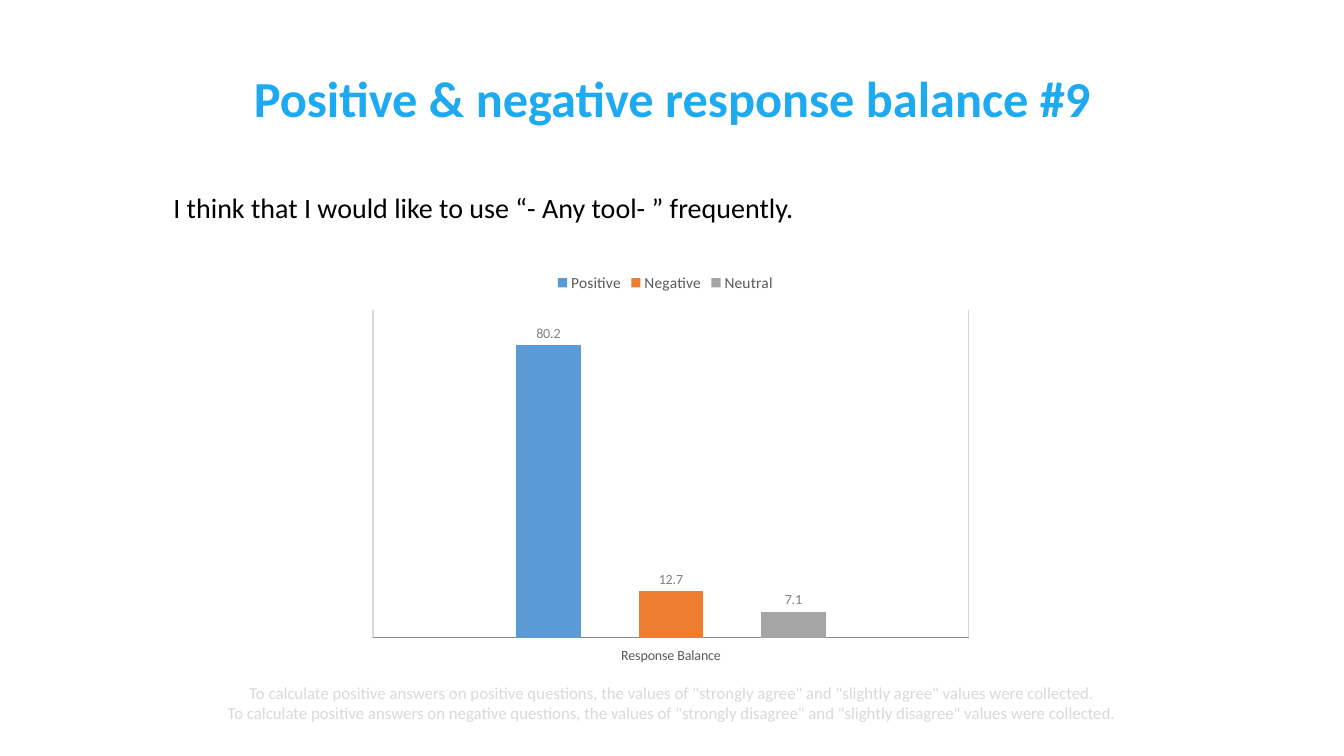
from dataclasses import dataclass

from lxml import etree
from pptx import Presentation
from pptx.chart.data import CategoryChartData
from pptx.dml.color import RGBColor
from pptx.enum import chart as ch, text as tx
from pptx.oxml import ns
from pptx.util import Inches, Pt

FONT = "Calibri"
SKY = RGBColor(0x1E, 0xAA, 0xF0)
BLACK = RGBColor(0, 0, 0)
DARK_GRAY = RGBColor(0x59, 0x59, 0x59)
LABEL_GRAY = RGBColor(0x80, 0x80, 0x80)
AXIS_GRAY = RGBColor(0x88, 0x88, 0x88)
PALE_GRAY = RGBColor(0xD9, 0xD9, 0xD9)
NUMBER_FORMAT = "0.#"


@dataclass(frozen=True)
class Response:
    name: str
    percent: float
    color: RGBColor


RESPONSES = [
    Response("Positive", 80.2, RGBColor(0x5B, 0x9B, 0xD5)),
    Response("Negative", 12.7, RGBColor(0xED, 0x7D, 0x31)),
    Response("Neutral", 7.1, RGBColor(0xA5, 0xA5, 0xA5)),
]
FOOTNOTES = [
    f'To calculate positive answers on {kind} questions, the values of '
    f'"strongly {verb}" and "slightly {verb}" values were collected.'
    for kind, verb in (("positive", "agree"), ("negative", "disagree"))
]


def set_font(font, size: float, color: RGBColor, bold: bool = False) -> None:
    font.name, font.size, font.bold = FONT, Pt(size), bold
    font.color.rgb = color


def write(shape, lines: list[str], size: float, color: RGBColor, align,
          anchor=tx.MSO_ANCHOR.TOP, bold: bool = False) -> None:
    frame = shape.text_frame
    frame.word_wrap = True
    frame.auto_size = tx.MSO_AUTO_SIZE.NONE
    frame.vertical_anchor = anchor
    frame.margin_left = frame.margin_right = Inches(0.05)
    frame.margin_top = frame.margin_bottom = Inches(0.05)
    frame.text = "\n".join(lines)
    for paragraph in frame.paragraphs:
        paragraph.alignment = align
        set_font(paragraph.font, size, color, bold)


def place_plot(chart, **fractions: float) -> None:
    """Fix the inner plot area as fractions of the chart frame."""
    plot_area = chart._chartSpace.chart.plotArea
    for old in plot_area.findall(ns.qn("c:layout")):
        plot_area.remove(old)
    layout = etree.Element(ns.qn("c:layout"))
    manual = etree.SubElement(layout, ns.qn("c:manualLayout"))
    settings = {"layoutTarget": "inner", "xMode": "edge", "yMode": "edge", **fractions}
    for tag, value in settings.items():
        etree.SubElement(manual, ns.qn(f"c:{tag}")).set("val", str(value))
    plot_area.insert(0, layout)


def add_balance_chart(slide) -> None:
    data = CategoryChartData(number_format=NUMBER_FORMAT)
    data.categories = ["Response Balance"]
    for response in RESPONSES:
        data.add_series(response.name, [response.percent])
    chart = slide.shapes.add_chart(
        ch.XL_CHART_TYPE.COLUMN_CLUSTERED,
        Inches(3.56), Inches(2.6), Inches(6.08), Inches(3.98), data).chart
    set_font(chart.font, 10, BLACK)
    chart.has_title = False
    place_plot(chart, x=0.023, y=0.119, w=0.972, h=0.819)

    chart.has_legend = True
    chart.legend.position = ch.XL_LEGEND_POSITION.TOP
    chart.legend.include_in_layout = True
    set_font(chart.legend.font, 11, DARK_GRAY)

    categories, values = chart.category_axis, chart.value_axis
    categories.major_tick_mark = values.major_tick_mark = ch.XL_TICK_MARK.NONE
    categories.tick_label_position = ch.XL_TICK_LABEL_POSITION.LOW
    set_font(categories.tick_labels.font, 10, DARK_GRAY)
    categories.has_major_gridlines = True
    for line, color in ((categories.format.line, AXIS_GRAY),
                        (categories.major_gridlines.format.line, PALE_GRAY)):
        line.color.rgb = color
        line.width = Pt(1)

    values.has_major_gridlines = False
    values.tick_label_position = ch.XL_TICK_LABEL_POSITION.NONE
    values.format.line.fill.background()
    values.minimum_scale, values.maximum_scale = 0, 90
    values.major_unit = 22.5

    plot = chart.plots[0]
    plot.vary_by_categories = False
    plot.gap_width, plot.overlap = 444, -90
    for series, response in zip(plot.series, RESPONSES):
        series.format.fill.solid()
        series.format.fill.fore_color.rgb = response.color
        labels = series.data_labels
        labels.show_value = True
        labels.position = ch.XL_LABEL_POSITION.OUTSIDE_END
        labels.number_format = NUMBER_FORMAT
        labels.number_format_is_linked = False
        set_font(labels.font, 10, LABEL_GRAY)


def main() -> None:
    deck = Presentation()
    deck.slide_width, deck.slide_height = Inches(13.33), Inches(7.5)
    slide = deck.slides.add_slide(deck.slide_layouts[5])

    footnote = slide.shapes.add_textbox(
        Inches(0.05), Inches(6.73), Inches(13.23), Inches(0.48))
    write(footnote, FOOTNOTES, 12, PALE_GRAY, tx.PP_ALIGN.CENTER, tx.MSO_ANCHOR.MIDDLE)

    title = slide.shapes.title
    title.left, title.top = Inches(1.67), Inches(0.67)
    title.width, title.height = Inches(10), Inches(0.65)
    write(title, ["Positive & negative response balance #9"], 36, SKY,
          tx.PP_ALIGN.CENTER, tx.MSO_ANCHOR.BOTTOM, bold=True)
    title.text_frame.paragraphs[0].line_spacing = 0.9

    statement = slide.shapes.add_textbox(
        Inches(1.67), Inches(1.67), Inches(10), Inches(1.5))
    write(statement, ["I think that I would like to use “- Any tool- ” frequently."],
          20, BLACK, tx.PP_ALIGN.LEFT)
    statement_line = statement.text_frame.paragraphs[0]
    statement_line.line_spacing = 1.5
    statement_line.space_before = Pt(10)

    add_balance_chart(slide)
    deck.save("out.pptx")


if __name__ == "__main__":
    main()
